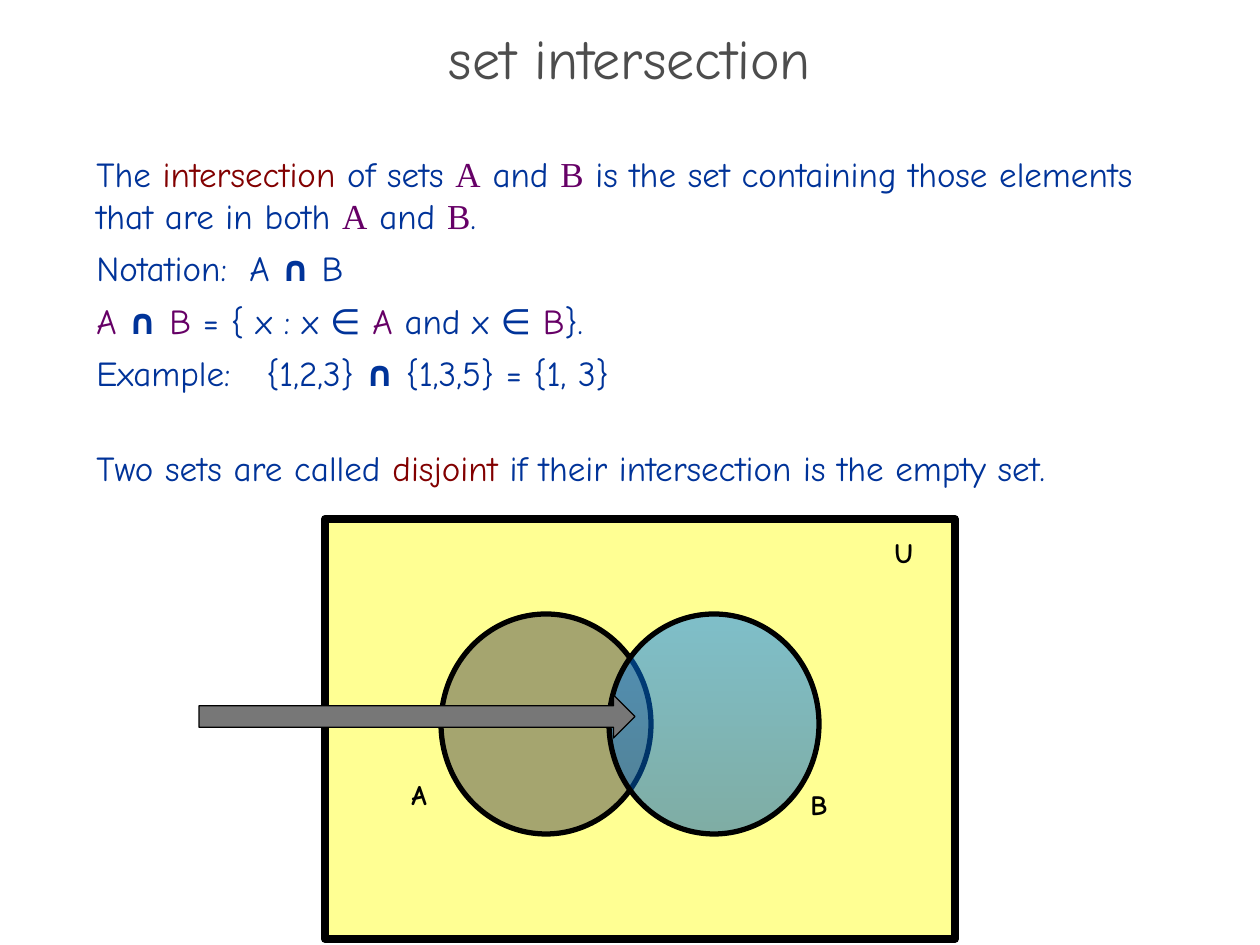
from lxml.etree import SubElement
from pptx import Presentation
from pptx.dml.color import RGBColor
from pptx.enum.shapes import MSO_SHAPE as Shape
from pptx.enum.text import MSO_ANCHOR as Anchor, MSO_AUTO_SIZE as AutoSize, PP_ALIGN as Align
from pptx.oxml.ns import qn
from pptx.util import Emu, Pt

PX_PER_INCH = 126
FONT = "Comic Neue"
SERIF = "Times New Roman"
BLUE, PURPLE, RED, BLACK = "003399", "660066", "820000", "000000"

# style: font, colour, bold
STYLES = {
    "plain": (FONT, BLUE, False),
    "operator": (FONT, BLUE, True),
    "term": (FONT, RED, False),
    "set": (FONT, PURPLE, False),
    "serif set": (SERIF, PURPLE, False),
}

# paragraph: spans, tab stop in px, space before in points
PARAGRAPHS = [
    ([("The ", "plain"), ("intersection", "term"), (" of sets ", "plain"),
      ("A", "serif set"), (" and ", "plain"), ("B", "serif set"),
      (" is the set containing those elements that are in both ", "plain"),
      ("A", "serif set"), (" and ", "plain"), ("B", "serif set"), (".", "plain")], None, 0),
    ([("Notation:\tA ", "plain"), ("∩", "operator"), (" B", "plain")], 153, 0),
    ([("A ", "set"), ("∩ ", "operator"), ("B", "set"), (" = { x : x ∈ ", "plain"),
      ("A", "set"), (" and x ∈ ", "plain"), ("B", "set"), ("}.", "plain")], None, 0),
    ([("Example:\t{1,2,3} ", "plain"), ("∩", "operator"),
      (" {1,3,5} = {1, 3}", "plain")], 170, 0),
    ([("Two sets are called ", "plain"), ("disjoint", "term"),
      (" if their intersection is the empty set.", "plain")], None, 24),
]


def px(length):
    return Emu(round(length * 914400 / PX_PER_INCH))


def rgb(colour):
    return RGBColor.from_string(colour)


def set_font(font, name, colour, bold=False):
    font.name, font.bold = name, bold
    font.color.rgb = rgb(colour)


def set_opacity(shape, percent):
    """Make every colour of the shape's fill partly transparent."""
    fill = shape._element.spPr.find(qn("a:solidFill"))
    if fill is None:
        fill = shape._element.spPr.find(qn("a:gradFill"))
    for colour in fill.iter(qn("a:srgbClr")):
        SubElement(colour, qn("a:alpha")).set("val", str(percent * 1000))


def add_title(page, text):
    title = page.shapes.title
    title.left, title.top, title.width, title.height = px(0), px(34), px(1260), px(63)
    title.text_frame.text = text
    title.text_frame.vertical_anchor = Anchor.MIDDLE
    para = title.text_frame.paragraphs[0]
    para.alignment, para.line_spacing = Align.CENTER, 0.7
    para.font.size = Pt(32)
    set_font(para.font, FONT, "4D4D4D")


def add_tab_stop(para, position):
    tabs = SubElement(para._p.get_or_add_pPr(), qn("a:tabLst"))
    tab = SubElement(tabs, qn("a:tab"))
    tab.set("pos", str(px(position)))
    tab.set("algn", "l")


def add_body(page):
    frame = page.shapes.add_textbox(px(84), px(146), px(1081), px(746)).text_frame
    frame.word_wrap = True
    for index, (spans, tab, before) in enumerate(PARAGRAPHS):
        para = frame.add_paragraph() if index else frame.paragraphs[0]
        para.space_before, para.space_after = Pt(before), Pt(6)
        if tab:
            add_tab_stop(para, tab)
        para.font.size = Pt(20)
        for text, style in spans:
            span = para.add_run()
            span.text = text
            set_font(span.font, *STYLES[style])


def add_figure(shapes, kind, left, top, width, height, colours, line, opacity=100):
    """Draw an outlined shape; two colours give a fill shaded from top to bottom."""
    shape = shapes.add_shape(kind, px(left), px(top), px(width), px(height))
    shape.shadow.inherit = False
    if len(colours) == 1:
        shape.fill.solid()
        shape.fill.fore_color.rgb = rgb(colours[0])
    else:
        shape.fill.gradient()
        shape.fill.gradient_angle = 270
        for stop, colour in zip(shape.fill.gradient_stops, colours):
            stop.color.rgb = rgb(colour)
    if opacity < 100:
        set_opacity(shape, opacity)
    shape.line.color.rgb = rgb(BLACK)
    shape.line.width = Pt(line)


def add_label(shapes, text, left, top):
    frame = shapes.add_textbox(px(left), px(top), px(54), px(63)).text_frame
    frame.word_wrap = False
    frame.auto_size = AutoSize.SHAPE_TO_FIT_TEXT
    para = frame.paragraphs[0]
    para.text = text
    para.font.size = Pt(16)
    set_font(para.font, FONT, BLACK, bold=True)


def add_venn_diagram(page):
    shapes = page.shapes.add_group_shape().shapes
    add_figure(shapes, Shape.RECTANGLE, 325, 519, 630, 420, ["FFFF66"], 4.5, 70)
    for left, colours in [(441, ["4D4D4D"]), (609, ["0080FF", "005CB6"])]:
        add_figure(shapes, Shape.OVAL, left, 614, 210, 220, colours, 3, 50)
    for text, left, top in [("U", 882, 529), ("A", 399, 771), ("B", 798, 781)]:
        add_label(shapes, text, left, top)


def main():
    deck = Presentation()
    deck.slide_width, deck.slide_height = px(1260), px(945)
    page = deck.slides.add_slide(deck.slide_layouts[5])
    add_title(page, "set intersection")
    add_body(page)
    add_venn_diagram(page)
    add_figure(page.shapes, Shape.RIGHT_ARROW, 199, 695, 436, 43, ["777777"], 0.75)
    deck.save("out.pptx")


if __name__ == "__main__":
    main()
